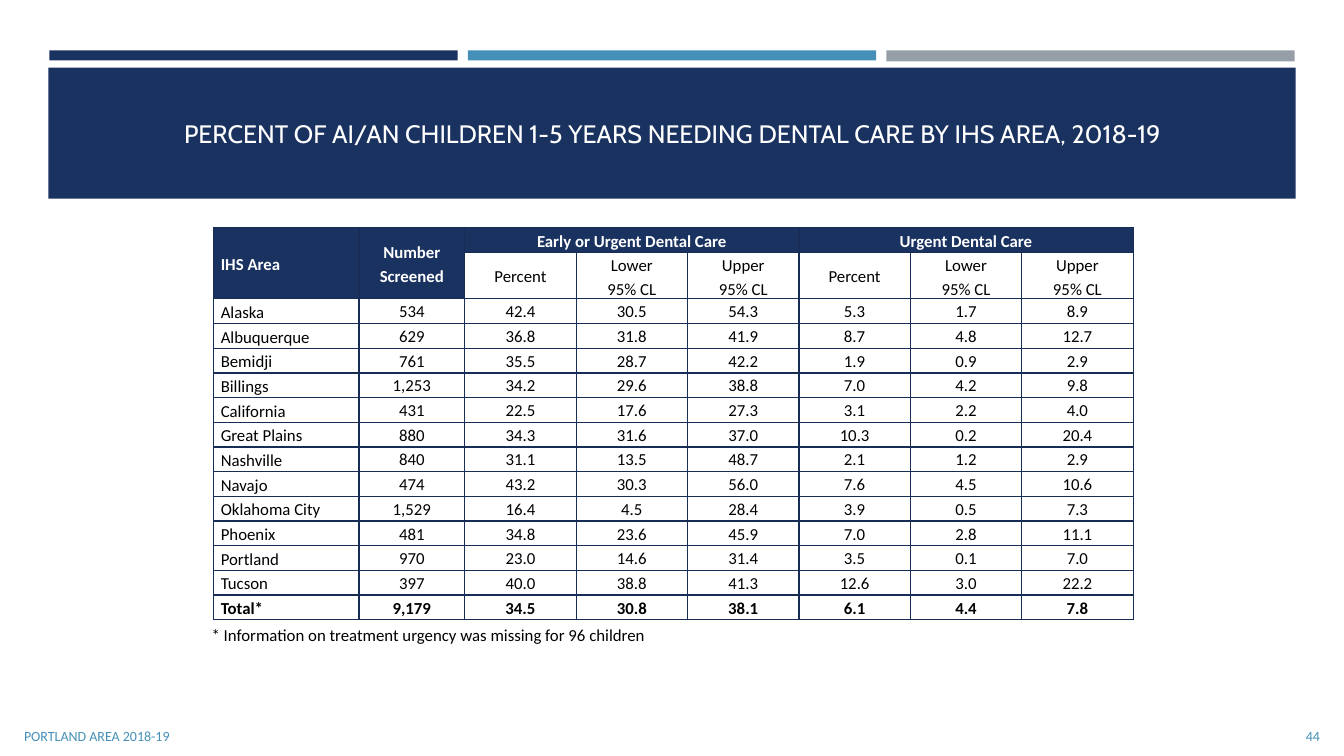
from lxml.etree import SubElement
from pptx import Presentation
from pptx.dml.color import RGBColor
from pptx.enum.shapes import MSO_SHAPE
from pptx.enum.text import MSO_ANCHOR, PP_ALIGN
from pptx.oxml.ns import qn
from pptx.util import Inches, Pt

COLORS = {
    "navy": "1A3260",
    "blue": "4590B8",
    "gray": "969FA7",
    "border": "172D56",
    "white": "FFFFFF",
    "black": "000000",
}


def write_text(frame, text, size=12, font="Calibri", color="black", bold=False,
               align=PP_ALIGN.LEFT, spacing=None):
    frame.word_wrap = True
    for index, line in enumerate(text.split("\n")):
        paragraph = frame.paragraphs[0] if index == 0 else frame.add_paragraph()
        paragraph.alignment = align
        paragraph.line_spacing = spacing
        run = paragraph.add_run()
        run.text = line
        run.font.size = Pt(size)
        run.font.name = font
        run.font.bold = bold
        run.font.color.rgb = RGBColor.from_string(COLORS[color])


def add_borders(cell):
    properties = cell._tc.get_or_add_tcPr()
    for index, side in enumerate(("lnL", "lnR", "lnT", "lnB")):
        line = SubElement(properties, qn(f"a:{side}"), w=str(Pt(1)))
        fill = SubElement(line, qn("a:solidFill"))
        SubElement(fill, qn("a:srgbClr"), val=COLORS["border"])
        properties.insert(index, line)


presentation = Presentation()
presentation.slide_width = Inches(13.33)
presentation.slide_height = Inches(7.5)
slide = presentation.slides.add_slide(presentation.slide_layouts[6])

# Top bars and title band
bands = [
    (0.49, 0.5, 4.05, 0.1, "navy"),
    (4.64, 0.5, 4.05, 0.1, "blue"),
    (8.79, 0.5, 4.05, 0.11, "gray"),
    (0.48, 0.67, 12.37, 1.3, "navy"),
]
for *box, color in bands:
    band = slide.shapes.add_shape(MSO_SHAPE.RECTANGLE, *map(Inches, box))
    band.shadow.inherit = False
    band.fill.solid()
    band.fill.fore_color.rgb = RGBColor.from_string(COLORS[color])
    band.line.fill.background()

# Title, footer, slide number and footnote
texts = [
    ((0.64, 0.77, 12.06, 1.11),
     "PERCENT OF AI/AN CHILDREN 1-5 YEARS NEEDING DENTAL CARE BY IHS AREA, 2018-19",
     MSO_ANCHOR.MIDDLE,
     dict(size=18, font="Cabin", color="white", align=PP_ALIGN.CENTER)),
    ((0.14, 7.1, 7.56, 0.4), "PORTLAND AREA 2018-19",
     MSO_ANCHOR.MIDDLE, dict(size=10, color="blue")),
    ((12.04, 7.1, 1.15, 0.4), "44",
     MSO_ANCHOR.MIDDLE, dict(size=10, color="blue", align=PP_ALIGN.RIGHT)),
    ((2, 6.15, 9.14, 0.3),
     "* Information on treatment urgency was missing for 96 children",
     MSO_ANCHOR.TOP, {}),
]
for box, text, anchor, text_format in texts:
    text_box = slide.shapes.add_textbox(*map(Inches, box))
    text_box.text_frame.vertical_anchor = anchor
    write_text(text_box.text_frame, text, **text_format)

# Table contents
measures = ["Percent", "Lower\n95% CL", "Upper\n95% CL"]
rows = [
    ["IHS Area", "Number Screened", "Early or Urgent Dental Care", "", "",
     "Urgent Dental Care", "", ""],
    ["", "", *measures, *measures],
    ["Alaska", "534", "42.4", "30.5", "54.3", "5.3", "1.7", "8.9"],
    ["Albuquerque", "629", "36.8", "31.8", "41.9", "8.7", "4.8", "12.7"],
    ["Bemidji", "761", "35.5", "28.7", "42.2", "1.9", "0.9", "2.9"],
    ["Billings", "1,253", "34.2", "29.6", "38.8", "7.0", "4.2", "9.8"],
    ["California", "431", "22.5", "17.6", "27.3", "3.1", "2.2", "4.0"],
    ["Great Plains", "880", "34.3", "31.6", "37.0", "10.3", "0.2", "20.4"],
    ["Nashville", "840", "31.1", "13.5", "48.7", "2.1", "1.2", "2.9"],
    ["Navajo", "474", "43.2", "30.3", "56.0", "7.6", "4.5", "10.6"],
    ["Oklahoma City", "1,529", "16.4", "4.5", "28.4", "3.9", "0.5", "7.3"],
    ["Phoenix", "481", "34.8", "23.6", "45.9", "7.0", "2.8", "11.1"],
    ["Portland", "970", "23.0", "14.6", "31.4", "3.5", "0.1", "7.0"],
    ["Tucson", "397", "40.0", "38.8", "41.3", "12.6", "3.0", "22.2"],
    ["Total*", "9,179", "34.5", "30.8", "38.1", "6.1", "4.4", "7.8"],
]

# Table grid
width, height = 9.12, 3.88
area_width, screened_width, measures_height = 1.44, 1.05, 0.45
measure_width = (width - area_width - screened_width) / 6
row_height = (height - measures_height) / (len(rows) - 1)
table = slide.shapes.add_table(len(rows), len(rows[0]), Inches(2.12), Inches(2.26),
                               Inches(width), Inches(height)).table
for column, column_width in zip(table.columns,
                                [area_width, screened_width] + [measure_width] * 6):
    column.width = Inches(column_width)
for row_index, row in enumerate(table.rows):
    row.height = Inches(measures_height if row_index == 1 else row_height)
for first, last in [((0, 0), (1, 0)), ((0, 1), (1, 1)), ((0, 2), (0, 4)), ((0, 5), (0, 7))]:
    table.cell(*first).merge(table.cell(*last))

# Table cells
for row_index, row in enumerate(rows):
    for column_index, text in enumerate(row):
        cell = table.cell(row_index, column_index)
        is_header = row_index == 0 or (row_index == 1 and column_index < 2)
        is_total = row_index == len(rows) - 1
        is_middle = row_index < 2 or column_index == 0
        cell.margin_left = cell.margin_right = Inches(0.07)
        cell.margin_top = cell.margin_bottom = 0
        cell.vertical_anchor = MSO_ANCHOR.MIDDLE if is_middle else MSO_ANCHOR.TOP
        cell.fill.solid()
        cell.fill.fore_color.rgb = RGBColor.from_string(
            COLORS["navy" if is_header else "white"])
        add_borders(cell)
        if text:
            write_text(cell.text_frame, text, color="white" if is_header else "black",
                       bold=is_header or is_total, spacing=1.15,
                       align=PP_ALIGN.CENTER if column_index else PP_ALIGN.LEFT)

presentation.save("out.pptx")
